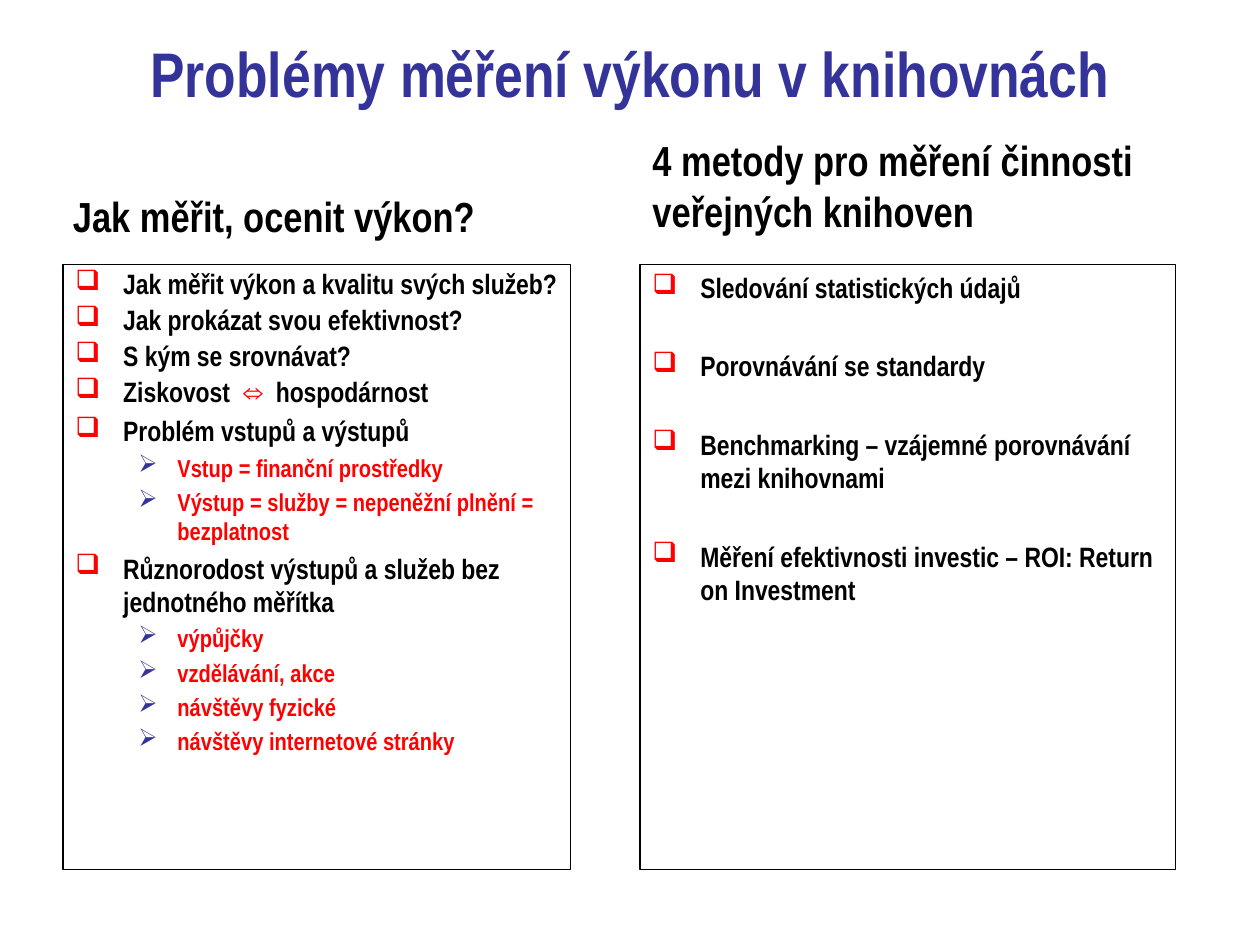
from lxml.etree import SubElement
from pptx import Presentation
from pptx.dml.color import RGBColor
from pptx.enum.shapes import MSO_SHAPE as Shape
from pptx.enum.text import MSO_ANCHOR as Anchor, MSO_AUTO_SIZE as AutoSize, PP_ALIGN as Align
from pptx.oxml.ns import qn
from pptx.util import Inches, Pt

BLACK, RED, BLUE = "000000", "FF0000", "333399"
# Per level: bullet, bullet colour, text colour, size, left margin, hanging indent
LEVELS = [
    ("❑", RED, BLACK, 16, 0.38, 0.38),
    ("➢", BLUE, RED, 14, 0.81, 0.31),
]


def add_run(paragraph, text, size, color):
    run = paragraph.add_run()
    run.text = text
    run.font.name = "Arial Narrow"
    run.font.size = Pt(size)
    run.font.bold = True
    run.font.color.rgb = RGBColor.from_string(color)


def add_bullet(paragraph, level):
    character, color, _, _, margin, hanging = LEVELS[level]
    properties = paragraph._p.get_or_add_pPr()
    properties.set("marL", str(Inches(margin)))
    properties.set("indent", str(-Inches(hanging)))
    bullet_color = SubElement(properties, qn("a:buClr"))
    SubElement(bullet_color, qn("a:srgbClr"), val=color)
    SubElement(properties, qn("a:buChar"), char=character)


presentation = Presentation()
presentation.slide_width, presentation.slide_height = Inches(10), Inches(7.5)
slide = presentation.slides.add_slide(presentation.slide_layouts[5])

title = slide.shapes.title
title.left, title.top = Inches(0.5), Inches(0.3)
title.width, title.height = Inches(9), Inches(0.54)
title.text_frame.auto_size = AutoSize.NONE
title.text_frame.vertical_anchor = Anchor.MIDDLE
title.text_frame.paragraphs[0].alignment = Align.CENTER
add_run(title.text_frame.paragraphs[0], "Problémy měření výkonu v knihovnách", 36, BLUE)

headings = [
    (0.48, 1.26, "Jak měřit, ocenit výkon?"),
    (5.08, 1.22, "4 metody pro měření činnosti veřejných knihoven"),
]
for left, top, text in headings:
    heading = slide.shapes.add_textbox(Inches(left), Inches(top), Inches(4.42), Inches(0.7))
    heading.text_frame.word_wrap = True
    heading.text_frame.vertical_anchor = Anchor.BOTTOM
    add_run(heading.text_frame.paragraphs[0], text, 24, BLACK)

# Each item: level, line spacing, runs as (text, colour or None for the level's own)
questions = [
    (0, 0.9, [("Jak měřit výkon a kvalitu svých služeb?", None)]),
    (0, 0.9, [("Jak prokázat svou efektivnost?", None)]),
    (0, 0.9, [("S kým se srovnávat?", None)]),
    (0, 0.9, [("Ziskovost  ", None), ("⇔ ", RED), (" hospodárnost", None)]),
    (0, 1.0, [("Problém vstupů a výstupů", None)]),
    (1, 1.0, [("Vstup = finanční prostředky", None)]),
    (1, 1.0, [("Výstup = služby = nepeněžní plnění = bezplatnost", None)]),
    (0, 1.0, [("Různorodost výstupů a služeb bez jednotného měřítka", None)]),
    (1, 1.0, [("výpůjčky", None)]),
    (1, 1.0, [("vzdělávání, akce", None)]),
    (1, 1.0, [("návštěvy fyzické", None)]),
    (1, 1.0, [("návštěvy internetové stránky", None)]),
]
methods = [
    (0, 1.0, [("Sledování statistických údajů", None)]),
    (0, 1.0, [("Porovnávání se standardy", None)]),
    (0, 1.0, [("Benchmarking – vzájemné porovnávání mezi knihovnami", None)]),
    (0, 1.0, [("Měření efektivnosti investic – ROI: Return on Investment", None)]),
]

# Left, width, items, space before an item (None: 20 % of the text size)
panels = [(0.5, 4.03, questions, None), (5.08, 4.25, methods, 25.5)]
for left, width, items, gap in panels:
    panel = slide.shapes.add_shape(
        Shape.RECTANGLE, Inches(left), Inches(2.1), Inches(width), Inches(4.8))
    panel.shadow.inherit = False
    panel.fill.background()
    panel.line.color.rgb = RGBColor.from_string(BLACK)
    panel.line.width = Pt(0.75)
    frame = panel.text_frame
    frame.word_wrap = True
    frame.vertical_anchor = Anchor.TOP
    for index, (level, line_spacing, runs) in enumerate(items):
        paragraph = frame.add_paragraph() if index else frame.paragraphs[0]
        _, _, color, size, _, _ = LEVELS[level]
        paragraph.level = level
        paragraph.alignment = Align.LEFT
        paragraph.line_spacing = line_spacing
        if index:
            paragraph.space_before = Pt(gap or 0.2 * size)
        add_bullet(paragraph, level)
        for text, run_color in runs:
            add_run(paragraph, text, size, run_color or color)

presentation.save("out.pptx")
